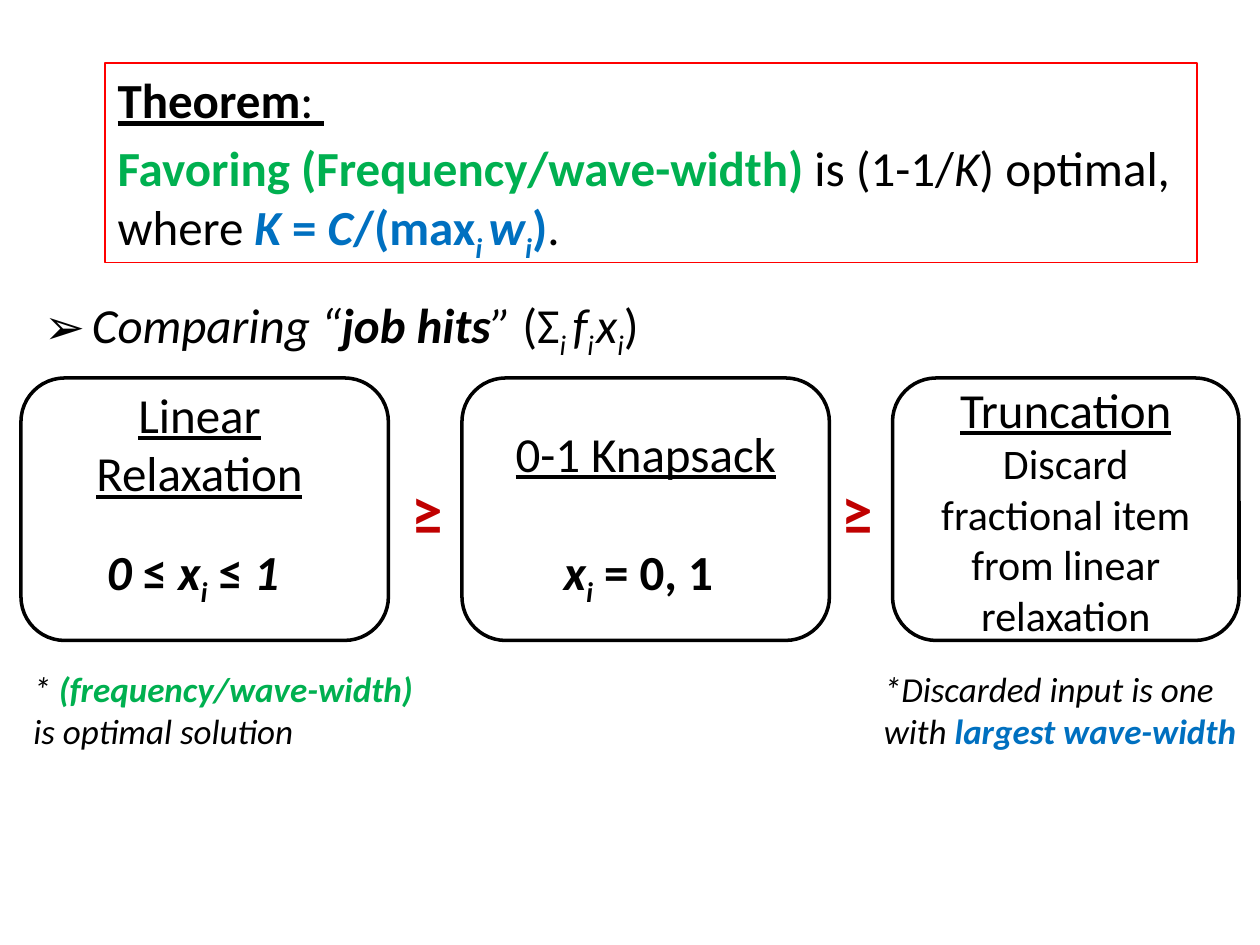
from lxml.etree import SubElement
from pptx import Presentation
from pptx.dml.color import RGBColor
from pptx.enum.shapes import MSO_SHAPE
from pptx.enum.text import MSO_ANCHOR, MSO_AUTO_SIZE, PP_ALIGN
from pptx.oxml.ns import qn
from pptx.util import Inches, Pt

BLACK, GREEN, BLUE, RED = "000000", "00B050", "0070C0", "C00000"
CELL = 1 / 12  # inches; the slide is 120 columns by 90 rows


def color(hex_string):
    return RGBColor.from_string(hex_string)


def cells(*counts):
    return [Inches(count * CELL) for count in counts]


class SlideBuilder:
    font_name = "Calibri"

    def __init__(self, slide):
        self.slide = slide

    def fill_text(self, shape, paragraphs, size=28, align=PP_ALIGN.LEFT,
                  anchor=MSO_ANCHOR.TOP, bullet=None):
        """Fill a shape with paragraphs of (text, marks, colour, size) runs.

        Marks: b bold, i italic, u underlined, _ subscript.
        """
        frame = shape.text_frame
        frame.word_wrap = True
        frame.auto_size = MSO_AUTO_SIZE.NONE
        frame.vertical_anchor = anchor
        for index, runs in enumerate(paragraphs):
            paragraph = frame.add_paragraph() if index else frame.paragraphs[0]
            paragraph.alignment = align
            paragraph.space_before = Pt(5.6 if index else 0)
            self.set_bullet(paragraph, bullet)
            for run in runs:
                self.add_run(paragraph, size, *run)

    def set_bullet(self, paragraph, bullet):
        properties = paragraph._p.get_or_add_pPr()
        indent = Inches(0.38) if bullet else 0
        properties.set("marL", str(indent))
        properties.set("indent", str(-indent))
        if bullet:
            SubElement(properties, qn("a:buFont"), typeface="Arial")
            SubElement(properties, qn("a:buChar"), char=bullet)
        else:
            SubElement(properties, qn("a:buNone"))

    def add_run(self, paragraph, default_size, text, marks="", hex_color=BLACK, size=None):
        run = paragraph.add_run()
        run.text = text
        font = run.font
        font.name = self.font_name
        font.size = Pt(size or default_size)
        font.bold, font.italic, font.underline = (mark in marks for mark in "biu")
        font.color.rgb = color(hex_color)
        if "_" in marks:
            font._element.set("baseline", "-25000")

    def placeholder(self, index, area, paragraphs, outline=None, **style):
        shape = self.slide.placeholders[index]
        shape.left, shape.top, shape.width, shape.height = cells(*area)
        if outline:
            shape.line.color.rgb = color(outline)
            shape.line.width = Pt(0.75)
        self.fill_text(shape, paragraphs, **style)

    def text(self, area, runs, **style):
        self.fill_text(self.slide.shapes.add_textbox(*cells(*area)), [runs], **style)

    def rounded_box(self, area, runs=()):
        shape = self.slide.shapes.add_shape(MSO_SHAPE.ROUNDED_RECTANGLE, *cells(*area))
        shape.shadow.inherit = False
        shape.fill.background()
        shape.line.color.rgb = color(BLACK)
        shape.line.width = Pt(2)
        self.fill_text(shape, [runs], align=PP_ALIGN.CENTER, anchor=MSO_ANCHOR.MIDDLE)


def main():
    presentation = Presentation()
    presentation.slide_width, presentation.slide_height = cells(120, 90)
    slide = presentation.slides.add_slide(presentation.slide_layouts[1])
    builder = SlideBuilder(slide)

    builder.placeholder(0, (10, 6, 104, 19), [
        [("Theorem", "bu"), (": ", "u")],
        [("Favoring (Frequency/wave-width) ", "b", GREEN), ("is (1-1/",), ("K", "i"),
         (") optimal, where ",), ("K", "bi", BLUE), (" = ", "b", BLUE), ("C", "bi", BLUE),
         ("/(max", "b", BLUE), ("i ", "bi_", BLUE), ("w", "bi", BLUE),
         ("i", "bi_", BLUE), (")", "b", BLUE), (".",)],
    ], outline="FF0000")
    builder.placeholder(1, (3, 27.4, 84, 8), [
        [("Comparing “", "i"), ("job hits", "bi"), ("” ", "i"), ("(Σ",), ("i ", "i_"),
         ("f", "i"), ("i", "i_"), (" ", "i_", BLACK, 10), ("x", "i"), ("i", "i_"), (")",)],
    ], bullet="➢")

    box_top, box_height = 36, 25
    for left in (2, 44):
        builder.rounded_box((left, box_top, 35, box_height))
    builder.rounded_box((85, box_top, 33, box_height), [
        ("Truncation ", "u"),
        ("Discard fractional item from linear relaxation", "", BLACK, 24)])

    for area, heading in (((3, 36, 32, 12.5), "Linear Relaxation"),
                          ((45.5, 39.7, 32, 7), "0-1 Knapsack")):
        builder.text(area, [(heading, "u")], align=PP_ALIGN.CENTER)
    builder.text((9, 51, 20, 7), [("0 ", "bi"), ("≤ ", "b"), ("x", "bi"), ("i", "bi_"),
                                  (" ≤ ", "b"), ("1", "bi")])
    builder.text((52.5, 51, 18, 7), [("x", "bi"), ("i", "bi_"), (" = 0, 1", "b")])
    for left in (38, 79):
        builder.text((left, 44.4, 6, 8.5), [("≥", "b", RED)], size=36)

    notes = (
        ((2, 63, 39, 12), [("* ", "i"), ("(frequency/wave-width)", "bi", GREEN),
                           (" is optimal solution", "i")]),
        ((83, 63, 37, 12), [("*Discarded input is one with ", "i"),
                            ("largest wave-width", "bi", BLUE)]),
    )
    for area, runs in notes:
        builder.text(area, runs, size=20)

    presentation.save("out.pptx")


if __name__ == "__main__":
    main()
